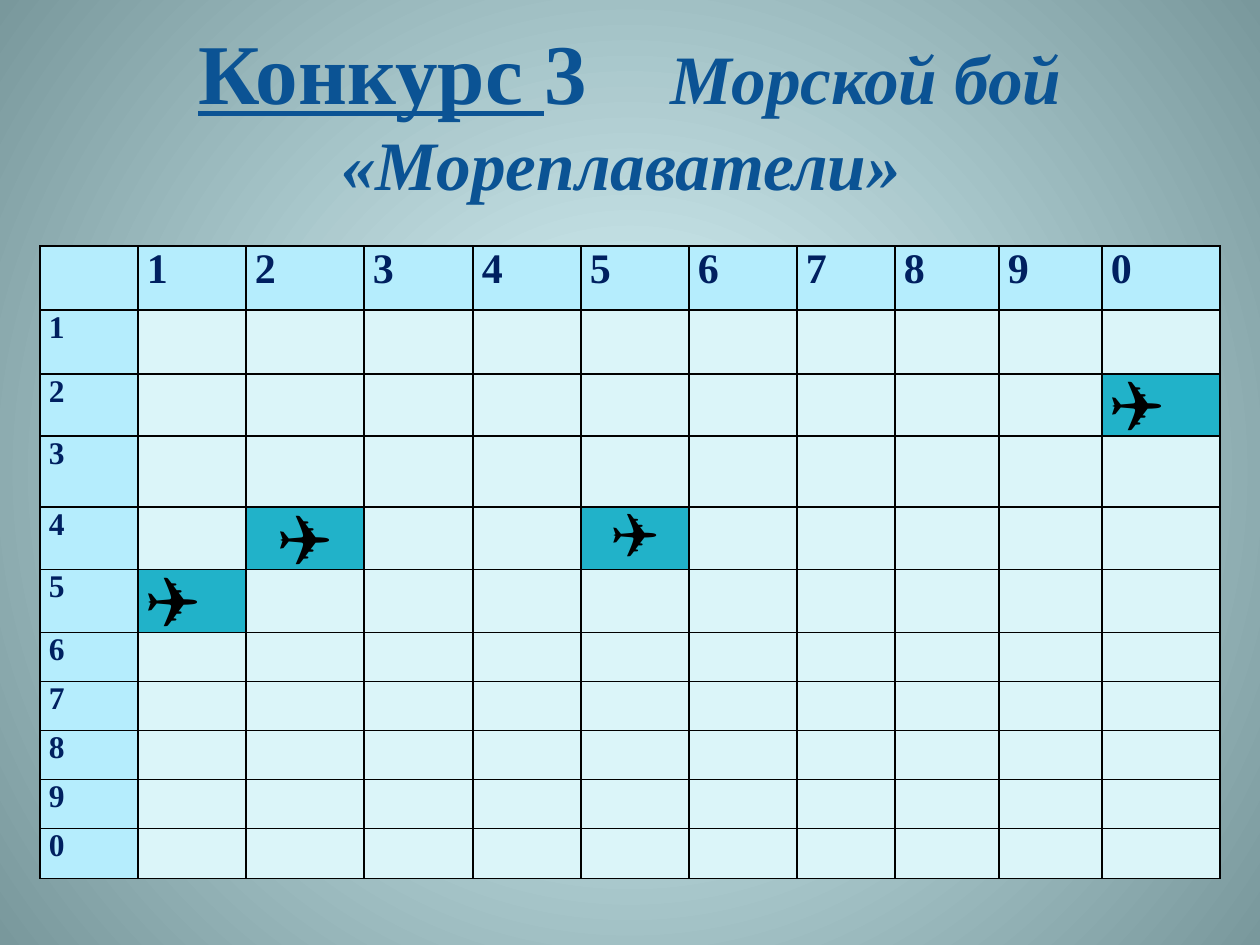
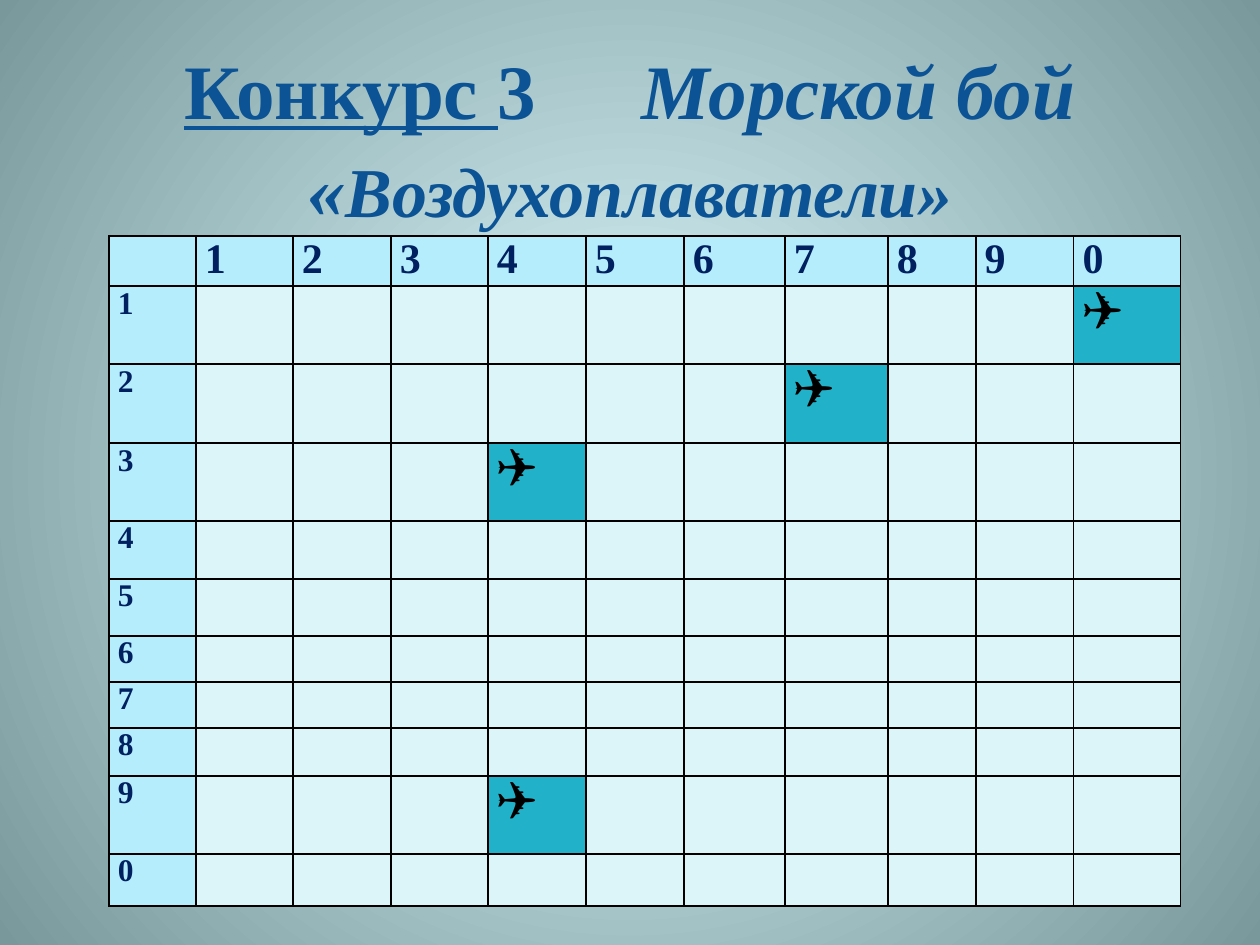
import pptx
import pptx.dml.color
import pptx.enum.text
import pptx.oxml
import pptx.oxml.ns
import pptx.util

FONT = "Times New Roman"
COLORS = {
    "glow": "DEFBFF", "edge": "79989C", "title": "0B5394", "label": "002060",
    "header": "B5EDFD", "water": "DBF5F9", "hit": "21B2C9", "ink": "000000",
}
ALIGN = pptx.enum.text.PP_ALIGN
LABELS = "1234567890"
PLANE = "✈"


def px(length):
    """Turn px into EMU."""
    return pptx.util.Emu(round(length * 914400 / 126))


def rgb(name):
    """Look up a named colour."""
    return pptx.dml.color.RGBColor.from_string(COLORS[name])


def add_xml(parent, markup):
    """Append a drawing element written as markup."""
    space = pptx.oxml.ns.nsdecls("a")
    tag, rest = markup.split(" ", 1)
    parent.append(pptx.oxml.parse_xml(f"{tag} {space} {rest}"))


def add_text(para, text, size, color, bold=True, italic=False, underline=False, spacing=0):
    """Add a formatted run to a paragraph."""
    span = para.add_run()
    span.text = text
    font = span.font
    font.name, font.size = FONT, pptx.util.Pt(size)
    font.bold, font.italic, font.underline = bold, italic, underline
    font.color.rgb = rgb(color)
    if spacing:
        span._r.get_or_add_rPr().set("spc", str(spacing * 100))


def paint_background(master):
    """Give every slide the same round gradient."""
    fill = master.background.fill
    fill.gradient()
    for stop, name, position in zip(fill.gradient_stops, ("glow", "edge"), (0, 1)):
        stop.color.rgb = rgb(name)
        stop.position = position
    gradient = master._element.xpath("./p:cSld/p:bg//a:gradFill")[0]
    for line in gradient.findall(pptx.oxml.ns.qn("a:lin")):
        gradient.remove(line)
    add_xml(gradient, '<a:path path="circle"><a:fillToRect l="50000" t="50000" '
                      'r="50000" b="50000"/></a:path>')


def add_title(page, box, spans, top_inset, bottom_inset):
    """Place the centred contest title in its box."""
    frame = page.shapes.add_textbox(*map(px, box)).text_frame
    frame.word_wrap = True
    frame.auto_size = pptx.enum.text.MSO_AUTO_SIZE.NONE
    frame.vertical_anchor = pptx.enum.text.MSO_ANCHOR.MIDDLE
    frame.margin_top, frame.margin_bottom = px(top_inset), px(bottom_inset)
    para = frame.paragraphs[0]
    para.alignment = ALIGN.CENTER
    for text, size, style in spans:
        add_text(para, text, size, "title", **style)


def style_cell(cell, fill):
    """Set a cell's fill, margins and black borders."""
    cell.margin_left = cell.margin_right = px(9)
    cell.margin_top = cell.margin_bottom = 0
    properties = cell._tc.get_or_add_tcPr()
    for side in "LRTB":
        add_xml(properties, f'<a:ln{side} w="12700"><a:solidFill><a:srgbClr '
                            f'val="{COLORS["ink"]}"/></a:solidFill></a:ln{side}>')
    cell.fill.solid()
    cell.fill.fore_color.rgb = rgb(fill)


def add_board(page, left, top, widths, heights, planes):
    """Draw the battle grid, with planes keyed by row and column."""
    table = page.shapes.add_table(
        len(heights), len(widths), px(left), px(top), px(sum(widths)), px(sum(heights))
    ).table
    for column, width in zip(table.columns, widths):
        column.width = px(width)
    for row, height in zip(table.rows, heights):
        row.height = px(height)
    for row in range(len(heights)):
        for column in range(len(widths)):
            cell = table.cell(row, column)
            para = cell.text_frame.paragraphs[0]
            if (row, column) in planes:
                size, bold, alignment = planes[row, column]
                style_cell(cell, "hit")
                para.alignment = alignment
                add_text(para, PLANE, size, "ink", bold=bold)
            elif row == 0 or column == 0:
                style_cell(cell, "header")
                if row or column:
                    add_text(para, LABELS[max(row, column) - 1], 18 if row else 24, "label")
            else:
                style_cell(cell, "water")


def build_sailors(page):
    """Build the sailors' slide."""
    add_title(page, (63, 38, 1134, 217), [
        ("Конкурс ", 48.6, {"underline": True}),
        ("3", 48.6, {}),
        (" ", 48.6, {"spacing": 36}),
        ("Морской бой «Мореплаватели»", 39.6, {"italic": True}),
        (" ", 39.6, {"italic": True, "spacing": 30}),
    ], top_inset=6, bottom_inset=75)
    add_board(
        page, 40, 246,
        widths=[98, 108, 118, 109, 108, 108, 108, 98, 104, 103, 118],
        heights=[64, 64, 62, 71, 62, 63, 49, 49, 49, 49, 50],
        planes={
            (2, 10): (32, True, ALIGN.LEFT), (4, 2): (32, False, ALIGN.CENTER),
            (4, 5): (28, True, ALIGN.CENTER), (5, 1): (32, False, ALIGN.LEFT),
        },
    )


def build_aviators(page):
    """Build the balloonists' slide."""
    add_title(page, (63, 0, 1134, 236), [
        ("Конкурс ", 44, {"underline": True}),
        ("3", 44, {}),
        (" ", 60, {"spacing": 45}),
        ("Морской бой «", 44, {"italic": True}),
        ("Воздухоплаватели»", 40, {"italic": True}),
    ], top_inset=18, bottom_inset=6)
    add_board(
        page, 109, 236,
        widths=[87, 97, 98, 97, 98, 98, 101, 103, 88, 98, 107],
        heights=[50, 78, 79, 78, 58, 57, 46, 46, 48, 78, 52],
        planes=dict.fromkeys([(1, 10), (2, 7), (3, 4), (9, 4)], (24, True, ALIGN.LEFT)),
    )


def main():
    """Build and save the deck."""
    deck = pptx.Presentation()
    deck.slide_width, deck.slide_height = px(1260), px(945)
    paint_background(deck.slide_master)
    for build in (build_sailors, build_aviators):
        build(deck.slides.add_slide(deck.slide_layouts[6]))
    deck.save("out.pptx")


if __name__ == "__main__":
    main()
